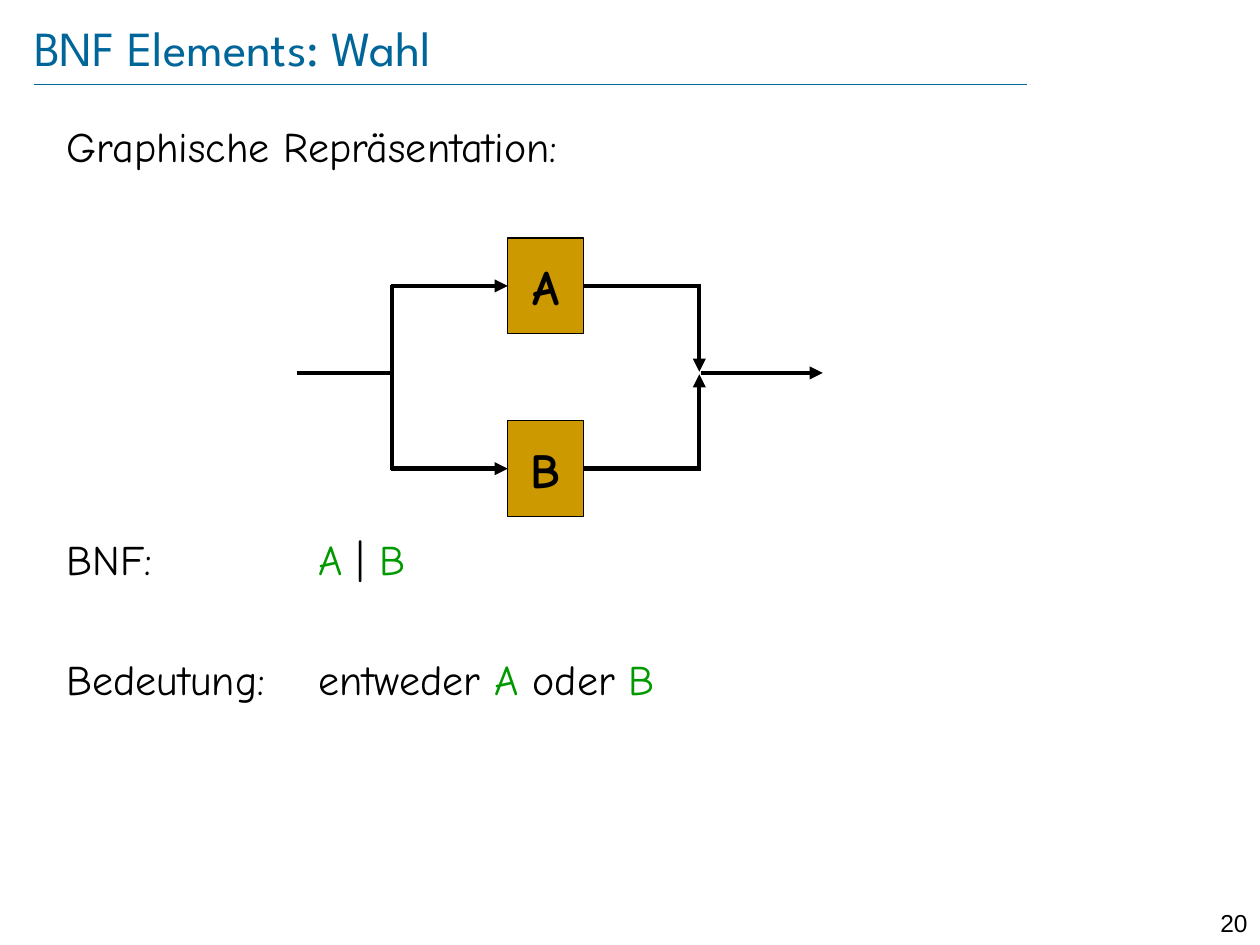
from dataclasses import dataclass

from lxml.etree import SubElement
from pptx import Presentation
from pptx.dml.color import RGBColor
from pptx.enum.shapes import MSO_CONNECTOR, MSO_SHAPE
from pptx.enum.text import MSO_ANCHOR, PP_ALIGN
from pptx.oxml.ns import qn
from pptx.util import Inches, Pt


@dataclass(frozen=True)
class Theme:
    heading: str = "006699"
    ink: str = "000000"
    symbol: str = "009900"
    node: str = "CC9900"
    heading_font: str = "League Spartan"
    body_font: str = "Comic Neue"
    number_font: str = "Arial"
    heading_size: int = 28
    body_size: int = 24
    number_size: int = 14


THEME = Theme()

# Content: each row has a space before it (pt) and runs of text and colour
TITLE = "BNF Elements: Wahl"
PAGE_NUMBER = "20"
ROWS = [
    (0, [("Graphische Repräsentation:", THEME.ink)]),
    (207, [("BNF:\t", THEME.ink), ("A ", THEME.symbol),
           ("| ", THEME.ink), ("B", THEME.symbol)]),
    (39.5, [("Bedeutung:\t", THEME.ink), ("entweder ", THEME.ink),
            ("A ", THEME.symbol), ("oder ", THEME.ink), ("B", THEME.symbol)]),
]
TAB_STOP = 2

# Diagram grid in inches: columns, the middle row, and one row per branch
ENTRY, SPLIT, NODE_LEFT, MERGE, EXIT = 2.36, 3.11, 4.03, 5.55, 6.53
MIDDLE = 2.96
BRANCHES = [("A", 2.27), ("B", 3.72)]
NODE_WIDTH, NODE_HEIGHT = 0.6, 0.76
OVERLAP = 0.01  # closes the corners where two strokes meet

deck = Presentation()
deck.slide_width, deck.slide_height = Inches(10), Inches(7.5)
page = deck.slides.add_slide(deck.slide_layouts[5])


def set_format(target, values):
    for name, value in values.items():
        setattr(target, name, value)


def place(shape, left, top, width, height):
    set_format(shape, {"left": Inches(left), "top": Inches(top),
                       "width": Inches(width), "height": Inches(height)})


def add_span(para, text, font, size, color, bold=False):
    span = para.add_run()
    span.text = text
    set_format(span.font, {"name": font, "size": Pt(size), "bold": bold})
    span.font.color.rgb = RGBColor.from_string(color)


def add_line(start, end, color=THEME.ink, width=2.5, arrow=False):
    line = page.shapes.add_connector(
        MSO_CONNECTOR.STRAIGHT, *(Inches(value) for value in (*start, *end)))
    line.line.color.rgb = RGBColor.from_string(color)
    line.line.width = Pt(width)
    if arrow:
        SubElement(line.line._get_or_add_ln(), qn("a:tailEnd"), type="triangle")
    SubElement(line._element.spPr, qn("a:effectLst"))
    return line


def add_node(label, center):
    node = page.shapes.add_shape(MSO_SHAPE.RECTANGLE, 0, 0, 0, 0)
    place(node, NODE_LEFT, center - NODE_HEIGHT / 2, NODE_WIDTH, NODE_HEIGHT)
    node.shadow.inherit = False
    node.fill.solid()
    node.fill.fore_color.rgb = RGBColor.from_string(THEME.node)
    node.line.color.rgb = RGBColor.from_string(THEME.ink)
    node.line.width = Pt(0.75)
    set_format(node.text_frame, {"word_wrap": False,
                                 "vertical_anchor": MSO_ANCHOR.MIDDLE})
    para = node.text_frame.paragraphs[0]
    para.alignment = PP_ALIGN.CENTER
    add_span(para, label, THEME.body_font, THEME.heading_size, THEME.ink, True)
    return node


# Title and rule
title = page.shapes.title
place(title, 0.27, 0.13, 8.69, 0.48)
set_format(title.text_frame, {
    "margin_left": 0, "margin_right": 0, "margin_top": 0, "margin_bottom": 0,
    "word_wrap": True, "vertical_anchor": MSO_ANCHOR.MIDDLE})
heading = title.text_frame.paragraphs[0]
heading.alignment = PP_ALIGN.LEFT
add_span(heading, TITLE, THEME.heading_font, THEME.heading_size, THEME.heading)
add_line((0.27, 0.67), (8.15, 0.67), THEME.heading, 0.25)

# Explanations, aligned on one tab stop
body = page.shapes.add_textbox(0, 0, 0, 0)
place(body, 0.43, 0.91, 9.53, 5.45)
body.text_frame.word_wrap = True
for index, (space, spans) in enumerate(ROWS):
    para = body.text_frame.add_paragraph() if index else body.text_frame.paragraphs[0]
    para.space_before = Pt(space)
    tabs = SubElement(para._p.get_or_add_pPr(), qn("a:tabLst"))
    SubElement(tabs, qn("a:tab"), pos=str(Inches(TAB_STOP)), algn="l")
    for text, color in spans:
        add_span(para, text, THEME.body_font, THEME.body_size, color)

# Diagram: both branches leave the split and meet again at the merge
add_line((ENTRY, MIDDLE), (SPLIT + OVERLAP, MIDDLE))
add_line((MERGE + OVERLAP, MIDDLE), (EXIT, MIDDLE), arrow=True)
for label, row in BRANCHES:
    outward = OVERLAP if row > MIDDLE else -OVERLAP
    node = add_node(label, row)
    add_line((SPLIT, MIDDLE), (SPLIT, row + outward))
    inlet = add_line((SPLIT - OVERLAP, row), (NODE_LEFT, row), arrow=True)
    inlet.end_connect(node, 1)
    outlet = add_line((NODE_LEFT + NODE_WIDTH, row), (MERGE + OVERLAP, row))
    outlet.begin_connect(node, 3)
    add_line((MERGE, row + outward), (MERGE, MIDDLE + outward), arrow=True)

# Page number
number = page.shapes.add_textbox(0, 0, 0, 0)
place(number, 9.25, 7.16, 0.75, 0.24)
set_format(number.text_frame, {"word_wrap": True, "margin_top": Inches(0.05)})
number_para = number.text_frame.paragraphs[0]
number_para.alignment = PP_ALIGN.RIGHT
add_span(number_para, PAGE_NUMBER, THEME.number_font, THEME.number_size, THEME.ink)

deck.save("out.pptx")
